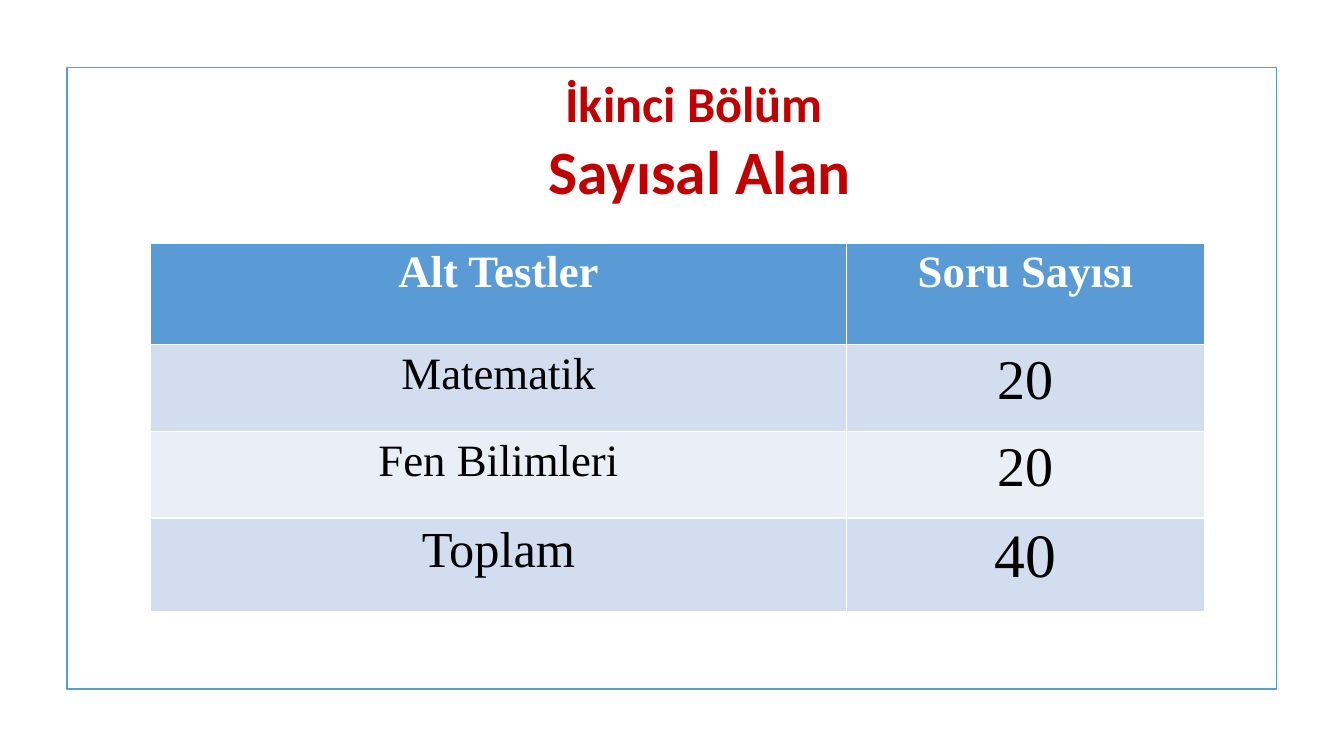
from pptx import Presentation
from pptx.dml.color import RGBColor
from pptx.enum.shapes import MSO_SHAPE
from pptx.enum.text import MSO_ANCHOR, PP_ALIGN
from pptx.util import Pt

BLUE = RGBColor(0x5B, 0x9B, 0xD5)
RED = RGBColor(0xC0, 0x00, 0x00)
WHITE = RGBColor(0xFF, 0xFF, 0xFF)
BLACK = RGBColor(0x00, 0x00, 0x00)
BAND_DARK = RGBColor(0xD2, 0xDE, 0xEF)
BAND_LIGHT = RGBColor(0xEA, 0xEF, 0xF7)


def add_span(para, text, size, font, color, bold):
    span = para.add_run()
    span.text = text
    span.font.color.rgb = color
    for name, value in {"size": Pt(size), "name": font, "bold": bold}.items():
        setattr(span.font, name, value)


deck = Presentation()
deck.slide_width, deck.slide_height = Pt(960), Pt(540)
page = deck.slides.add_slide(deck.slide_layouts[6])

# Frame
frame = page.shapes.add_shape(MSO_SHAPE.RECTANGLE, Pt(47.8), Pt(48.2), Pt(864), Pt(444.2))
frame.shadow.inherit = False
frame.fill.background()
frame.line.color.rgb = BLUE
frame.line.width = Pt(1.25)

# Title
title = page.shapes.add_textbox(Pt(280.8), Pt(45.4), Pt(438.5), Pt(104.4)).text_frame
title_format = {"word_wrap": True, "vertical_anchor": MSO_ANCHOR.TOP, "margin_top": Pt(6)}
for name, value in title_format.items():
    setattr(title, name, value)
para = title.paragraphs[0]
para.alignment = PP_ALIGN.CENTER
add_span(para, "İkinci Bölüm ", 36, "Calibri", RED, True)
para.add_line_break()
add_span(para, "Sayısal Alan", 44, "Calibri", RED, True)

# Table: row height, fill, then text and size of each cell
rows = [
    (72.7, BLUE, [("Alt Testler", 32), ("Soru Sayısı", 32)]),
    (61.9, BAND_DARK, [("Matematik", 32), ("20", 40)]),
    (61.9, BAND_LIGHT, [("Fen Bilimleri", 32), ("20", 40)]),
    (67, BAND_DARK, [("Toplam", 36), ("40", 44)]),
]
table = page.shapes.add_table(len(rows), 2, Pt(107.5), Pt(173.5), Pt(752.8), Pt(263.5)).table
for column, width in zip(table.columns, (497.3, 255.5)):
    column.width = Pt(width)
for row, (height, fill, entries) in zip(table.rows, rows):
    row.height = Pt(height)
    header = fill == BLUE
    for cell, (text, size) in zip(row.cells, entries):
        cell.fill.solid()
        cell.fill.fore_color.rgb = fill
        para = cell.text_frame.paragraphs[0]
        para.alignment = PP_ALIGN.CENTER
        add_span(para, text, size, "Times New Roman", WHITE if header else BLACK, header)

deck.save("out.pptx")
